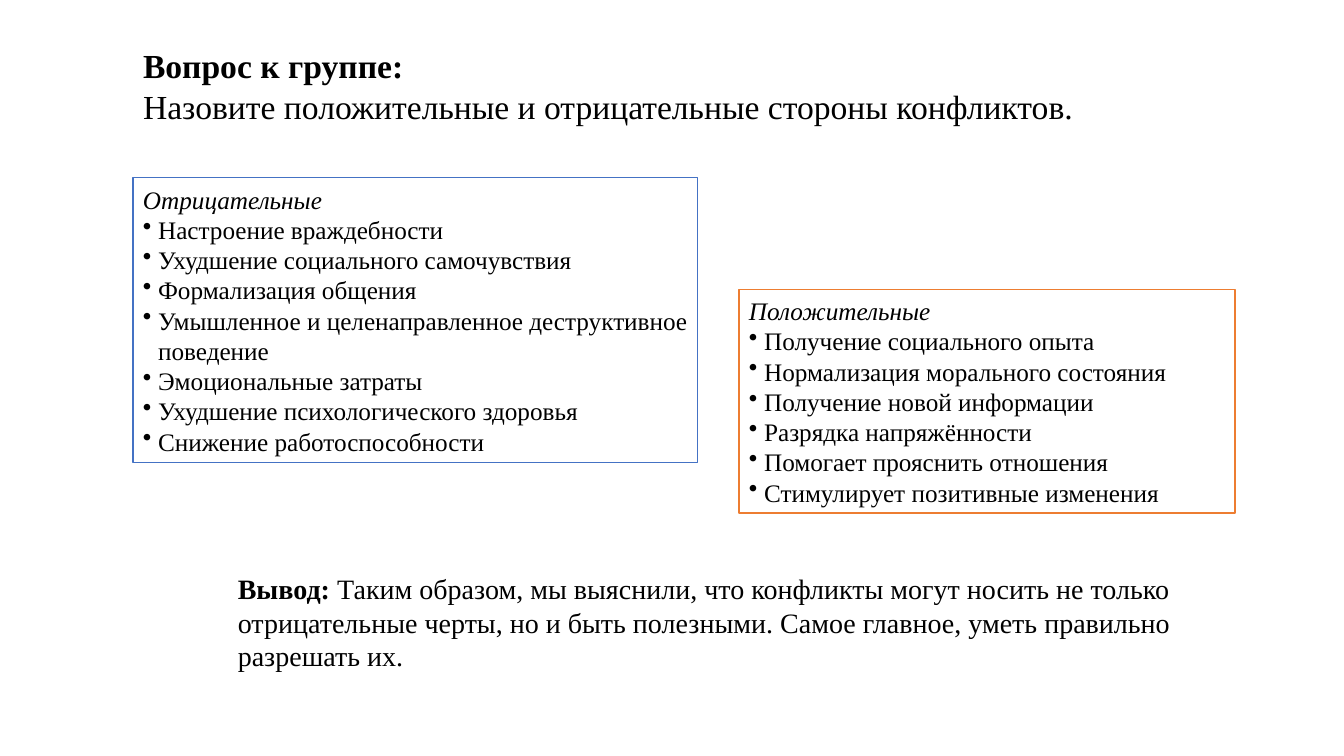
from lxml import etree
from pptx import Presentation
from pptx import util as u
from pptx.dml.color import RGBColor
from pptx.enum import shapes, text
from pptx.oxml.ns import qn

HARM = [
    "Настроение враждебности",
    "Ухудшение социального самочувствия",
    "Формализация общения",
    "Умышленное и целенаправленное деструктивное поведение",
    "Эмоциональные затраты",
    "Ухудшение психологического здоровья",
    "Снижение работоспособности",
]
GAIN = [
    "Получение социального опыта",
    "Нормализация морального состояния",
    "Получение новой информации",
    "Разрядка напряжённости",
    "Помогает прояснить отношения",
    "Стимулирует позитивные изменения",
]


def color(code):
    return RGBColor.from_string(code)


class Board:
    face = "Times New Roman"
    ink = "000000"
    paper = "FFFFFF"
    hang = u.Inches(0.15)

    def __init__(self, slide):
        self.slide = slide

    def style(self, para, size, **look):
        para.alignment = text.PP_ALIGN.LEFT
        font = para.font
        font.name, font.size = self.face, u.Pt(size)
        font.color.rgb = color(self.ink)
        for name, value in look.items():
            setattr(font, name, value)

    def fill(self, frame, lines):
        """Write one paragraph per line and return the paragraphs."""
        frame.word_wrap = True
        frame.text = "\n".join(lines)
        return frame.paragraphs

    def label(self, area, lines, size):
        box = self.slide.shapes.add_textbox(*map(u.Inches, area))
        paras = self.fill(box.text_frame, lines)
        for para in paras:
            self.style(para, size)
        return paras

    def bullet(self, para):
        props = para._p.get_or_add_pPr()
        props.set("marL", str(self.hang))
        props.set("indent", str(-self.hang))
        etree.SubElement(props, qn("a:buChar")).set("char", "•")

    def panel(self, area, head, items, edge):
        box = self.slide.shapes.add_shape(
            shapes.MSO_SHAPE.RECTANGLE, *map(u.Inches, area))
        box.shadow.inherit = False
        box.fill.solid()
        box.fill.fore_color.rgb = color(self.paper)
        box.line.color.rgb = color(edge)
        box.line.width = u.Pt(1)
        box.text_frame.vertical_anchor = text.MSO_ANCHOR.MIDDLE
        first, *rest = self.fill(box.text_frame, [head, *items])
        self.style(first, 18, italic=True)
        for para in rest:
            self.bullet(para)
            self.style(para, 18)


def main():
    deck = Presentation()
    deck.slide_width, deck.slide_height = u.Inches(13.33), u.Inches(7.5)
    board = Board(deck.slides.add_slide(deck.slide_layouts[6]))

    title = board.label((1.32, 0.4, 12.01, 0.91), [
        "Вопрос к группе:",
        "Назовите положительные и отрицательные стороны конфликтов.",
    ], 24)
    title[0].font.bold = True

    board.panel((1.32, 1.76, 5.6, 2.83), "Отрицательные", HARM, "4472C4")
    board.panel((7.33, 2.87, 4.92, 2.22), "Положительные", GAIN, "ED7D31")

    result = board.label((2.26, 5.62, 9.52, 1.11), ["Вывод:"], 20)[0]
    result.runs[0].font.bold = True
    result.add_run().text = (
        " Таким образом, мы выяснили, что конфликты могут носить не только "
        "отрицательные черты, но и быть полезными. Самое главное, уметь "
        "правильно разрешать их.")

    deck.save("out.pptx")


if __name__ == "__main__":
    main()
